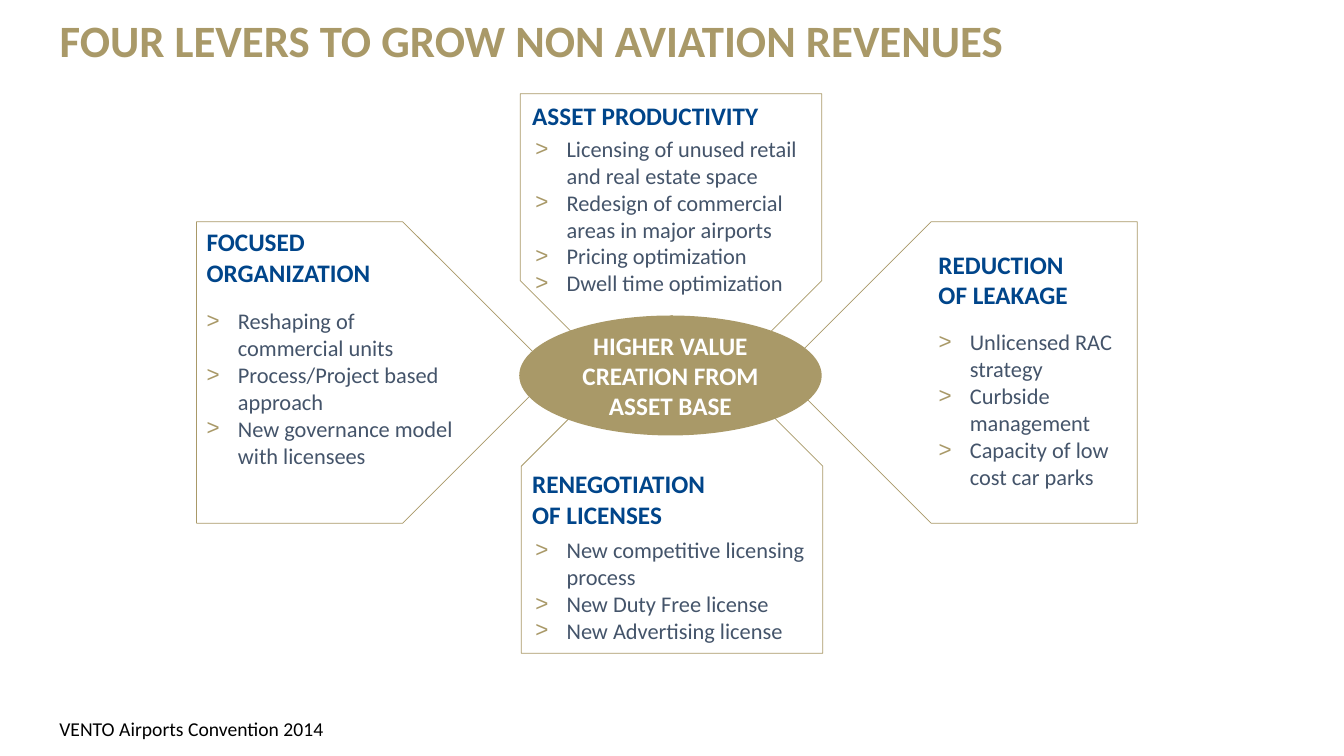
from lxml.etree import SubElement
from pptx import Presentation
from pptx.dml.color import RGBColor
from pptx.enum.shapes import MSO_SHAPE as Shape
from pptx.enum.text import MSO_ANCHOR as Anchor, MSO_AUTO_SIZE as AutoSize, PP_ALIGN as Align
from pptx.oxml.ns import qn
from pptx.util import Inches, Pt

GOLD = RGBColor(0xA9, 0x99, 0x68)
BLUE = RGBColor(0x00, 0x45, 0x8A)
SLATE = RGBColor(0x44, 0x54, 0x6A)
WHITE = RGBColor(0xFF, 0xFF, 0xFF)
BLACK = RGBColor(0x00, 0x00, 0x00)

# Pentagon box, rotation
ARROWS = [
    ((4.99, 3.31, 3.35, 2.99), 270),
    ((7.74, 2.2, 3.54, 2.99), 180),
    ((1.95, 2.2, 3.54, 2.99), 0),
    ((4.98, 1.11, 3.35, 2.99), 90),
]

# Heading, heading box, list items, list box
LEVERS = [
    ("ASSET PRODUCTIVITY", (5.18, 0.95, 2.98, 0.4),
     ["Licensing of unused retail and real estate space",
      "Redesign of commercial areas in major airports",
      "Pricing optimization",
      "Dwell time optimization"], (5.21, 1.29, 2.95, 1.72)),
    ("RENEGOTIATION \vOF LICENSES", (5.18, 4.6, 2.98, 0.71),
     ["New competitive licensing process",
      "New Duty Free license",
      "New Advertising license"], (5.21, 5.27, 2.95, 1.18)),
    ("FOCUSED\nORGANIZATION", (1.95, 2.2, 2.09, 0.71),
     ["Reshaping of commercial units",
      "Process/Project based approach",
      "New governance model with licensees"], (1.95, 3, 2.76, 1.72)),
    ("REDUCTION \vOF LEAKAGE", (9.21, 2.42, 2.17, 0.71),
     ["Unlicensed RAC strategy",
      "Curbside management",
      "Capacity of low cost car parks"], (9.21, 3.21, 2.11, 1.72)),
]


class LeverSlide:
    font_name = "Calibri"

    def __init__(self, presentation):
        comparison_layout = presentation.slide_layouts[4]
        self.slide = presentation.slides.add_slide(comparison_layout)
        self.shapes = self.slide.shapes
        self.bodies = iter(list(self.slide.placeholders)[1:])

    def place(self, shape, box):
        shape.left, shape.top, shape.width, shape.height = map(Inches, box)

    def set_text(self, shape, text, size, color, bold=False, align=Align.LEFT,
                 anchor=Anchor.TOP, bulleted=False):
        frame = shape.text_frame
        frame.text = text
        frame.word_wrap = True
        frame.auto_size = AutoSize.NONE
        frame.vertical_anchor = anchor
        for paragraph in frame.paragraphs:
            paragraph.alignment = align
            paragraph.space_before = Pt(0)
            if bulleted:
                self.add_bullet(paragraph)
            font = paragraph.font
            font.name, font.size, font.bold = self.font_name, Pt(size), bold
            font.color.rgb = color

    def add_bullet(self, paragraph):
        properties = paragraph._p.get_or_add_pPr()
        properties.set("marL", str(Inches(0.31)))
        properties.set("indent", str(Inches(-0.31)))
        bullet_color = SubElement(properties, qn("a:buClr"))
        SubElement(bullet_color, qn("a:srgbClr"), val=str(GOLD))
        SubElement(properties, qn("a:buFont"), typeface="Arial")
        SubElement(properties, qn("a:buChar"), char=">")

    def add_title(self, text, box):
        title = self.shapes.title
        self.place(title, box)
        self.set_text(title, text, 32, GOLD, bold=True)
        title.text_frame.paragraphs[0].line_spacing = 0.9

    def add_text(self, text, box, size, color, **style):
        self.set_text(self.shapes.add_textbox(*map(Inches, box)), text, size, color, **style)

    def add_list(self, items, box):
        body = next(self.bodies)
        self.place(body, box)
        self.set_text(body, "\n".join(items), 16, SLATE, bulleted=True)

    def add_arrow(self, box, rotation):
        arrow = self.shapes.add_shape(Shape.PENTAGON, *map(Inches, box))
        arrow.rotation = rotation
        arrow.shadow.inherit = False
        arrow.fill.background()
        arrow.line.color.rgb = GOLD
        arrow.line.width = Pt(0.5)

    def add_hub(self, text, box):
        hub = self.shapes.add_shape(Shape.OVAL, *map(Inches, box))
        hub.shadow.inherit = False
        hub.fill.solid()
        hub.fill.fore_color.rgb = GOLD
        hub.line.fill.background()
        self.set_text(hub, text, 18, WHITE, bold=True, align=Align.CENTER, anchor=Anchor.MIDDLE)


def main():
    presentation = Presentation()
    presentation.slide_width = Inches(13.33)
    presentation.slide_height = Inches(7.5)

    slide = LeverSlide(presentation)
    slide.add_title("FOUR LEVERS TO GROW NON AVIATION REVENUES", (0.49, 0.14, 12.61, 0.46))
    for box, rotation in ARROWS:
        slide.add_arrow(box, rotation)
    slide.add_hub("HIGHER VALUE CREATION FROM ASSET BASE", (5.15, 3.13, 3, 1.19))
    for heading, heading_box, items, list_box in LEVERS:
        slide.add_text(heading, heading_box, 18, BLUE, bold=True)
        slide.add_list(items, list_box)
    slide.add_text("VENTO Airports Convention 2014", (0.49, 7.06, 4.5, 0.34), 14, BLACK,
                   anchor=Anchor.MIDDLE)
    presentation.save("out.pptx")


if __name__ == "__main__":
    main()
